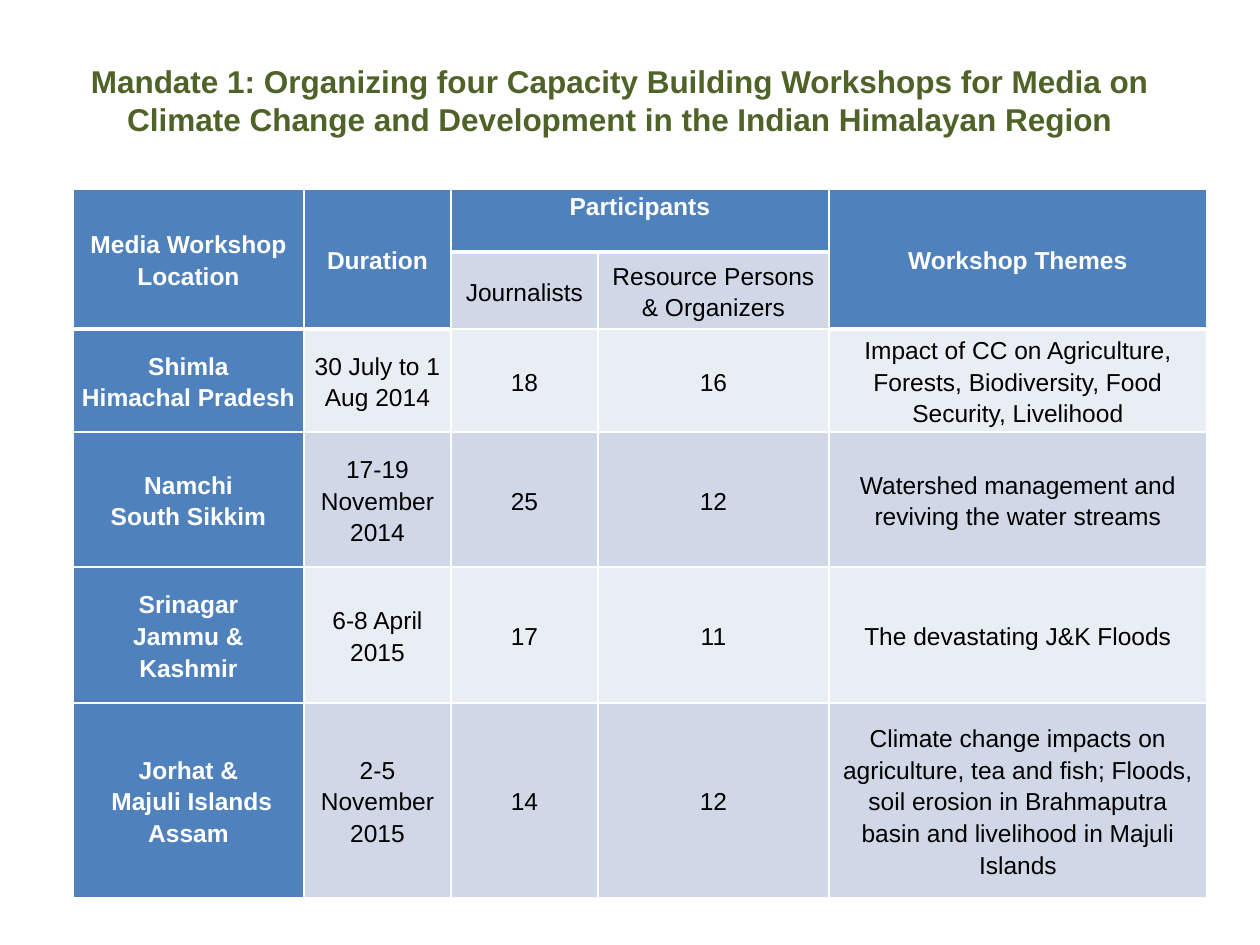
from dataclasses import dataclass

from lxml.etree import SubElement
from pptx import Presentation
from pptx.dml.color import RGBColor
from pptx.enum.text import MSO_ANCHOR, PP_ALIGN
from pptx.oxml import parse_xml
from pptx.oxml.ns import nsdecls
from pptx.util import Pt

SCALE = 914400 / 126
COLORS = {"title": "4F6228", "head": "4F81BD", "dark": "D0D8E8",
          "light": "E9EDF4", "white": "FFFFFF", "black": "000000"}
COLS = [231, 147, 147, 231, 378]
ROWS = [63, 77, 103, 135, 136, 195]
TITLE = ("Mandate 1: Organizing four Capacity Building Workshops for Media on "
         "Climate Change and Development in the Indian Himalayan Region")


@dataclass
class Head:
    text: str
    col: int
    rows: int = 1
    cols: int = 1
    anchor: MSO_ANCHOR = MSO_ANCHOR.MIDDLE


@dataclass
class Workshop:
    place: str
    dates: str
    press: int
    staff: int
    theme: str


HEADS = [
    Head("Media Workshop Location", 0, rows=2),
    Head("Duration", 1, rows=2),
    Head("Participants", 2, cols=2, anchor=MSO_ANCHOR.TOP),
    Head("Workshop Themes", 4, rows=2),
]
SUBHEADS = ["Journalists", "Resource Persons & Organizers"]
WORKSHOPS = [
    Workshop("Shimla\nHimachal Pradesh", "30 July to 1 Aug 2014", 18, 16,
             "Impact of CC on Agriculture, Forests, Biodiversity, "
             "Food Security, Livelihood"),
    Workshop("Namchi\nSouth Sikkim", "17-19 November 2014", 25, 12,
             "Watershed management and reviving the water streams"),
    Workshop("Srinagar\nJammu & Kashmir", "6-8 April 2015", 17, 11,
             "The devastating J&K Floods"),
    Workshop("Jorhat &\n Majuli Islands Assam", "2-5 November 2015", 14, 12,
             "Climate change impacts on agriculture, tea and fish; Floods, "
             "soil erosion in Brahmaputra basin and livelihood in Majuli Islands"),
]


def px(count: int) -> int:
    return round(count * SCALE)


def rgb(name: str) -> RGBColor:
    return RGBColor.from_string(COLORS[name])


def apply(target, values: dict) -> None:
    for key, value in values.items():
        setattr(target, key, value)


def write(frame, text: str, size: int, color: str, bold: bool,
          spacing: float = 1.0) -> None:
    frame.text = text
    for para in frame.paragraphs:
        apply(para, {"alignment": PP_ALIGN.CENTER, "line_spacing": spacing})
        font = para.runs[0].font
        apply(font, {"name": "Arial", "size": Pt(size), "bold": bold})
        font.color.rgb = rgb(color)


def fill_cell(cell, text: str, fill: str, color: str = "black",
              bold: bool = False, anchor: MSO_ANCHOR = MSO_ANCHOR.MIDDLE) -> None:
    write(cell.text_frame, text, 14, color, bold, 1.15)
    apply(cell, {"margin_left": px(9), "margin_right": px(9), "margin_top": 0,
                 "margin_bottom": 0, "vertical_anchor": anchor})
    cell.fill.solid()
    cell.fill.fore_color.rgb = rgb(fill)


def edge(cell) -> None:
    """Draw thin white borders with a heavy one below."""
    props = cell._tc.get_or_add_tcPr()
    for spot, (side, width) in enumerate({"L": 1, "R": 1, "T": 1, "B": 3}.items()):
        line = parse_xml(f'<a:ln{side} {nsdecls("a")} w="{Pt(width)}"><a:solidFill>'
                         f'<a:srgbClr val="{COLORS["white"]}"/>'
                         f'</a:solidFill></a:ln{side}>')
        props.insert(spot, line)


def add_title(slide) -> None:
    title = slide.shapes.title
    apply(title, {"left": px(53), "top": px(21), "width": px(1134), "height": px(158)})
    write(title.text_frame, TITLE, 18, "title", True)
    title.text_frame.vertical_anchor = MSO_ANCHOR.MIDDLE


def add_grid(slide) -> None:
    table = slide.shapes.add_table(len(ROWS), len(COLS), px(73), px(189),
                                   px(sum(COLS)), px(sum(ROWS))).table
    table.first_col = True
    for col, width in zip(table.columns, COLS):
        col.width = px(width)
    for row, height in zip(table.rows, ROWS):
        row.height = px(height)

    for head in HEADS:
        cell = table.cell(0, head.col)
        cell.merge(table.cell(head.rows - 1, head.col + head.cols - 1))
        fill_cell(cell, head.text, "head", "white", True, head.anchor)
        edge(cell)
    for col, text in enumerate(SUBHEADS, 2):
        fill_cell(table.cell(1, col), text, "dark")
    for row, shop in enumerate(WORKSHOPS, 2):
        fill_cell(table.cell(row, 0), shop.place, "head", "white", True)
        band = "dark" if row % 2 else "light"
        values = [shop.dates, shop.press, shop.staff, shop.theme]
        for col, value in enumerate(values, 1):
            fill_cell(table.cell(row, col), str(value), band)


def main() -> None:
    deck = Presentation()
    apply(deck, {"slide_width": px(1260), "slide_height": px(945)})
    slide = deck.slides.add_slide(deck.slide_layouts[5])
    add_title(slide)
    add_grid(slide)
    deck.save("out.pptx")


if __name__ == "__main__":
    main()
